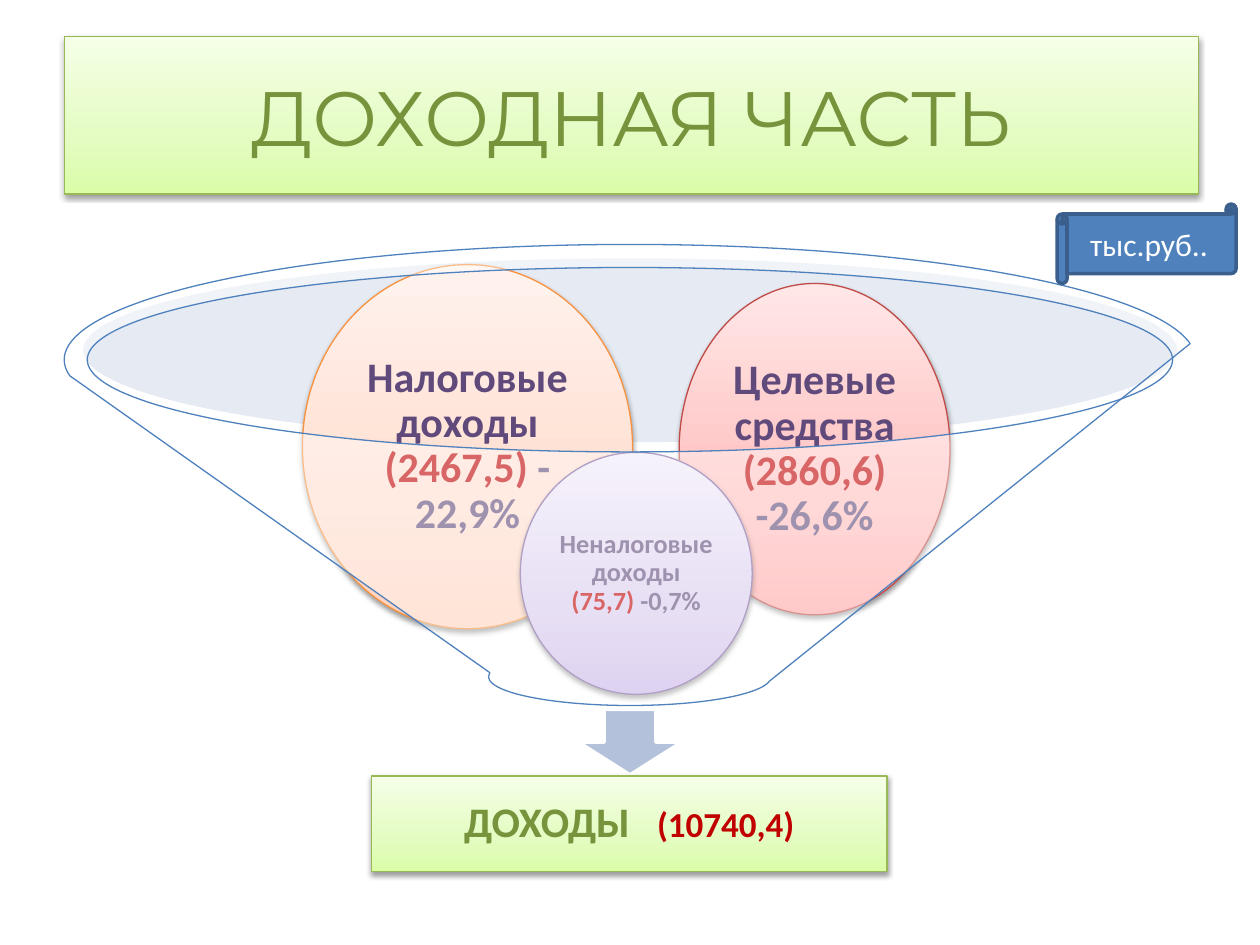
import pptx
import pptx.util
import pptx.dml.color
import pptx.enum.shapes
import pptx.enum.text
from lxml import etree
from pptx.oxml.ns import qn

Inches, Pt = pptx.util.Inches, pptx.util.Pt
RGB = pptx.dml.color.RGBColor.from_string
SHAPE = pptx.enum.shapes.MSO_SHAPE

THEME = {
    "body": "Calibri", "heading": "Montserrat",
    "title_size": 44, "large": 24, "medium": 20, "unit_size": 18, "small": 15,
    "green": "77933C", "purple": "604A7B", "red": "C00000", "white": "FFFFFF",
    "blue": "4F81BD", "dark_blue": "3A5F8C", "pale_blue": "C2CDE1", "arrow": "B3C1DB",
}
# Gradient colours from bottom to top, then the outline
TINTS = {
    "green": ("DAFDA7", "E4FCC2", "F5FFE7", "98B955"),
    "red": ("FFA6A5", "FFC0BF", "FFE7E7", "BF4C48"),
    "orange": ("FFD2BD", "FFDED0", "FFF2ED", "F69240"),
    "purple": ("C9B5E8", "D8CBEE", "F0EAF9", "7D60A0"),
}
STOPS = (0, 35, 100)

TITLE = "ДОХОДНАЯ ЧАСТЬ"
UNIT = "тыс.руб.."
TOTAL = ("ДОХОДЫ", "(10740,4)")
# Box, tint, text size, inset, lines of (text, colour) runs
SOURCES = [
    ((5.39, 2.25, 2.15, 2.63), "red", "large", 0.03,
     [[("Целевые", "purple")], [("средства", "purple")],
      [("(2860,6)", "red")], [("-26,6%", "purple")]]),
    ((2.4, 2.1, 2.62, 2.89), "orange", "large", 0.03,
     [[("Налоговые", "purple")], [("доходы", "purple")],
      [("(2467,5) ", "red"), ("-", "purple")], [("22,9%", "purple")]]),
    ((4.13, 3.59, 1.84, 1.92), "purple", "small", 0.02,
     [[("Неналоговые", "purple")], [("доходы", "purple")],
      [("(75,7) ", "red"), ("-0,7%", "purple")]]),
]


def place(s, box):
    for name, value in zip(("left", "top", "width", "height"), box):
        setattr(s, name, Inches(value))


def outline(s, color, width):
    s.line.color.rgb = RGB(color)
    s.line.width = Pt(width)


def add_alpha(parent, percent):
    etree.SubElement(parent, qn("a:alpha"), val=str(percent * 1000))


def add_shape(slide, kind, box, fill=None, line=None, width=0.75, opacity=100):
    s = slide.shapes.add_shape(kind, *map(Inches, box))
    s.shadow.inherit = False
    if fill:
        s.fill.solid()
        s.fill.fore_color.rgb = RGB(fill)
        if opacity < 100:
            add_alpha(s.element.spPr.find(".//" + qn("a:srgbClr")), opacity)
    if line:
        outline(s, line, width)
    else:
        s.line.fill.background()
    return s


def style_glossy(s, tint):
    """Vertical three-stop gradient, thin outline and soft shadow below."""
    *colors, edge = TINTS[tint]
    s.fill.gradient()
    s.fill.gradient_angle = 90
    stops = s.element.spPr.find(".//" + qn("a:gsLst"))
    for old in list(stops):
        stops.remove(old)
    for pos, color in zip(STOPS, colors):
        gs = etree.SubElement(stops, qn("a:gs"), pos=str(pos * 1000))
        etree.SubElement(gs, qn("a:srgbClr"), val=color)
    outline(s, edge, 0.75)
    s.shadow.inherit = False
    effects = s.element.spPr.find(qn("a:effectLst"))
    shadow = etree.SubElement(effects, qn("a:outerShdw"), blurRad=str(Pt(3.1)),
                              dist=str(Pt(1.6)), dir="5400000", rotWithShape="0")
    add_alpha(etree.SubElement(shadow, qn("a:srgbClr"), val="000000"), 38)


def start_text(s, inset=None):
    tf = s.text_frame
    tf.word_wrap = True
    tf.vertical_anchor = pptx.enum.text.MSO_ANCHOR.MIDDLE
    if inset is not None:
        for side in ("left", "top", "right", "bottom"):
            setattr(tf, "margin_" + side, Inches(inset))
    p = tf.paragraphs[0]
    p.alignment = pptx.enum.text.PP_ALIGN.CENTER
    return p


def add_run(p, text, size, color, font="body", bold=False):
    r = p.add_run()
    r.text = text
    r.font.color.rgb = RGB(THEME[color])
    formats = {"name": THEME[font], "size": Pt(THEME[size]), "bold": bold}
    for name, value in formats.items():
        setattr(r.font, name, value)
    return r


def add_source(slide, box, tint, size, inset, lines):
    s = add_shape(slide, SHAPE.OVAL, box)
    style_glossy(s, tint)
    p = start_text(s, inset)
    p.line_spacing = 0.9
    for i, line in enumerate(lines):
        if i:
            p.add_line_break()
        for text, color in line:
            add_run(p, text, size, color, bold=True)
    for br in p._p.findall(qn("a:br")):
        etree.SubElement(br, qn("a:rPr"), sz=str(THEME[size] * 100))


def add_total(slide, box):
    s = add_shape(slide, SHAPE.RECTANGLE, box)
    style_glossy(s, "green")
    p = start_text(s, 0.19)
    p.line_spacing = 0.9
    label, amount = TOTAL
    add_run(p, label, "large", "green", bold=True)
    gap = add_run(p, " ", "medium", "green", bold=True)
    gap._r.get_or_add_rPr().set("spc", "1100")
    add_run(p, amount, "medium", "red", bold=True)


def main():
    prs = pptx.Presentation()
    prs.slide_width, prs.slide_height = Inches(10), Inches(7.5)
    slide = prs.slides.add_slide(prs.slide_layouts[5])

    title = slide.shapes.title
    place(title, (0.51, 0.29, 9, 1.25))
    style_glossy(title, "green")
    add_run(start_text(title), TITLE, "title_size", "green", font="heading")

    add_shape(slide, SHAPE.OVAL, (0.66, 2.05, 8.68, 1.46), THEME["pale_blue"], opacity=40)
    add_shape(slide, SHAPE.DOWN_ARROW, (4.59, 5.63, 0.82, 0.52),
              THEME["arrow"], THEME["white"], 2)
    add_total(slide, (2.95, 6.16, 4.09, 0.76))
    for source in SOURCES:
        add_source(slide, *source)
    add_shape(slide, SHAPE.FUNNEL, (0.51, 1.94, 8.98, 3.66),
              THEME["white"], THEME["blue"], opacity=40)

    unit = add_shape(slide, SHAPE.HORIZONTAL_SCROLL, (8.39, 1.62, 1.42, 0.63),
                     THEME["blue"], THEME["dark_blue"], 2)
    add_run(start_text(unit), UNIT, "unit_size", "white")

    prs.save("out.pptx")


if __name__ == "__main__":
    main()
